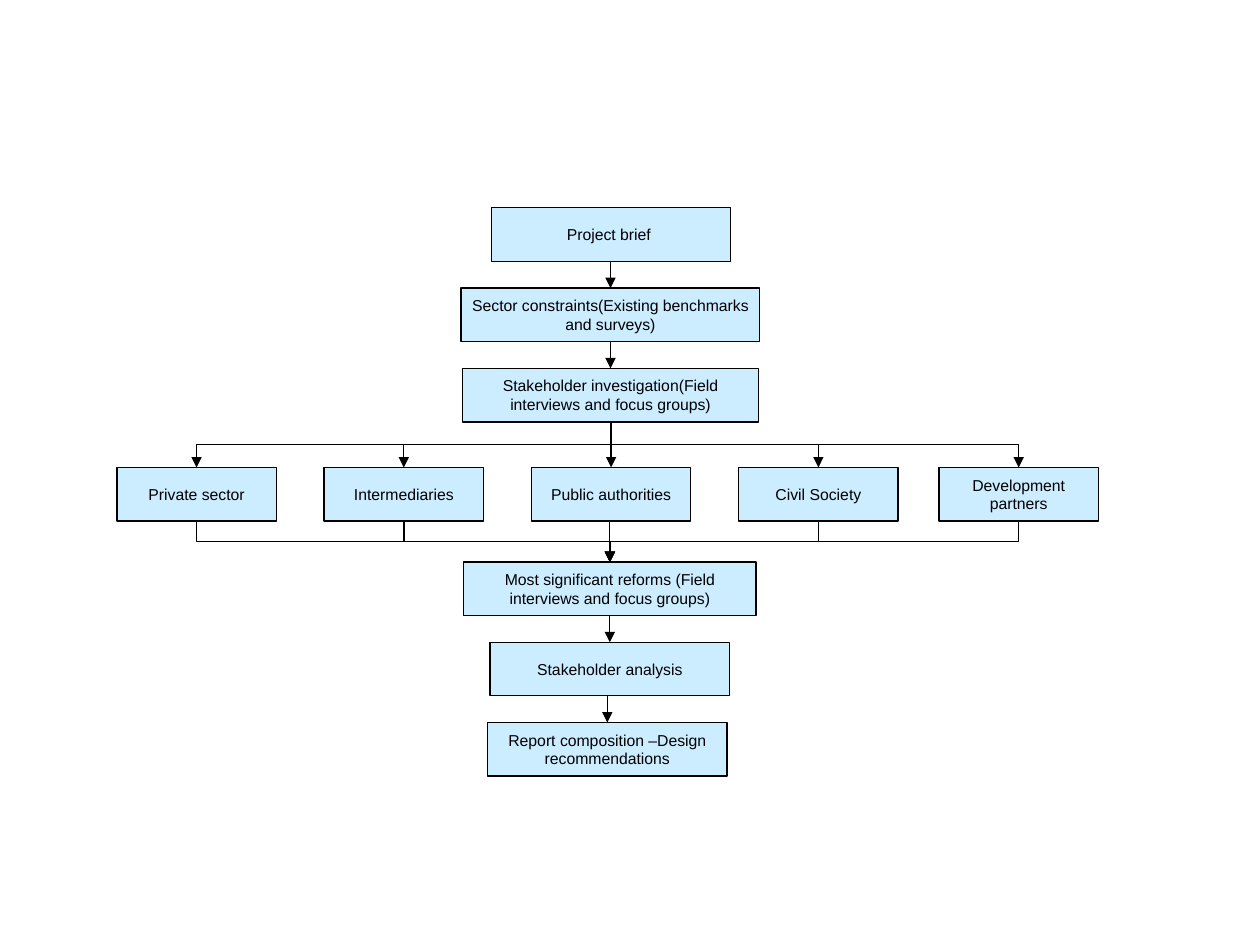
import pptx
import pptx.dml.color
import pptx.enum.shapes
import pptx.enum.text
import pptx.oxml.ns
import pptx.util
from lxml import etree

COLORS = {"fill": "CCECFF", "ink": "000000"}
COLUMNS, ROWS = 100, 75
BOX_HEIGHT = 4.25
ROW_PITCH = 6.37
BRANCH_TOP, BRANCH_WIDTH = 37.1, 12.65
BRANCH_START, BRANCH_PITCH = 15.6, 16.45

INTRODUCTION = [
    ("Project brief ", 48.5, 19),
    ("Sector constraints(Existing benchmarks and surveys)", 48.45, 23.7),
    ("Stakeholder investigation(Field interviews and focus groups)", 48.45, 23.5),
]
SECTORS = ["Private sector", "Intermediaries", "Public authorities", "Civil Society"]
CONCLUSION = [
    ("Most significant reforms (Field interviews and focus groups)", 48.4, 23.2),
    ("Stakeholder analysis", 48.4, 19),
    ("Report composition –Design recommendations", 48.2, 19),
]


def apply_format(target, values):
    for name, value in values.items():
        setattr(target, name, value)


class FlowChart:
    frame_format = {
        "word_wrap": True,
        "vertical_anchor": pptx.enum.text.MSO_ANCHOR.MIDDLE,
        "margin_left": pptx.util.Inches(0.07),
        "margin_right": pptx.util.Inches(0.07),
        "margin_top": pptx.util.Inches(0.04),
        "margin_bottom": pptx.util.Inches(0.04),
    }
    paragraph_format = {
        "alignment": pptx.enum.text.PP_ALIGN.CENTER,
        "space_after": pptx.util.Pt(10),
    }
    font_format = {"name": "Arial", "size": pptx.util.Pt(9)}

    def __init__(self, presentation):
        self.slide = presentation.slides.add_slide(presentation.slide_layouts[6])
        self.cell_width = presentation.slide_width / COLUMNS
        self.cell_height = presentation.slide_height / ROWS

    def place(self, column, row):
        return round(column * self.cell_width), round(row * self.cell_height)

    def color(self, target, name):
        target.rgb = pptx.dml.color.RGBColor.from_string(COLORS[name])

    def outline(self, line):
        line.width = pptx.util.Pt(0.75)
        line.fill.solid()
        self.color(line.fill.fore_color, "ink")

    def box(self, text, center, top, width):
        shape = self.slide.shapes.add_shape(
            pptx.enum.shapes.MSO_SHAPE.RECTANGLE,
            *self.place(center - width / 2, top),
            *self.place(width, BOX_HEIGHT),
        )
        shape.shadow.inherit = False
        shape.fill.solid()
        self.color(shape.fill.fore_color, "fill")
        self.outline(shape.line)
        apply_format(shape.text_frame, self.frame_format)
        paragraph = shape.text_frame.paragraphs[0]
        apply_format(paragraph, self.paragraph_format)
        run = paragraph.add_run()
        run.text = text
        apply_format(run.font, self.font_format)
        self.color(run.font.color, "ink")
        return center, top

    def arrow(self, source, target):
        kinds = pptx.enum.shapes.MSO_CONNECTOR
        start_column, start_row = source[0], source[1] + BOX_HEIGHT
        end_column, end_row = target
        shift = end_column - start_column
        if abs(shift) < 0.5:
            connector = self.slide.shapes.add_connector(
                kinds.STRAIGHT,
                *self.place(end_column, start_row),
                *self.place(end_column, end_row),
            )
        else:
            middle_column = (start_column + end_column) / 2
            middle_row = (start_row + end_row) / 2
            half_width, half_height = (end_row - start_row) / 2, abs(shift) / 2
            connector = self.slide.shapes.add_connector(
                kinds.ELBOW,
                *self.place(middle_column - half_width, middle_row - half_height),
                *self.place(middle_column + half_width, middle_row + half_height),
            )
            transform = connector._element.spPr.find(pptx.oxml.ns.qn("a:xfrm"))
            transform.set("rot", str((90 if shift < 0 else 270) * 60000))
            if shift > 0:
                transform.set("flipH", "1")
        self.outline(connector.line)
        line = connector.line._get_or_add_ln()
        etree.SubElement(line, pptx.oxml.ns.qn("a:tailEnd"), type="triangle")
        etree.SubElement(connector._element.spPr, pptx.oxml.ns.qn("a:effectLst"))

    def chain(self, steps, first_top):
        places = [
            self.box(text, center, first_top + index * ROW_PITCH, width)
            for index, (text, center, width) in enumerate(steps)
        ]
        for source, target in zip(places, places[1:]):
            self.arrow(source, target)
        return places


def main():
    presentation = pptx.Presentation()
    presentation.slide_width = pptx.util.Inches(10)
    presentation.slide_height = pptx.util.Inches(7.5)
    chart = FlowChart(presentation)

    investigation = chart.chain(INTRODUCTION, 16.5)[-1]
    reforms = chart.chain(CONCLUSION, 44.6)[0]
    branches = [
        (text, BRANCH_START + index * BRANCH_PITCH)
        for index, text in enumerate(SECTORS)
    ]
    branches.append(("Development partners", 80.85))
    for text, center in branches:
        branch = chart.box(text, center, BRANCH_TOP, BRANCH_WIDTH)
        chart.arrow(investigation, branch)
        chart.arrow(branch, reforms)

    presentation.save("out.pptx")


if __name__ == "__main__":
    main()
